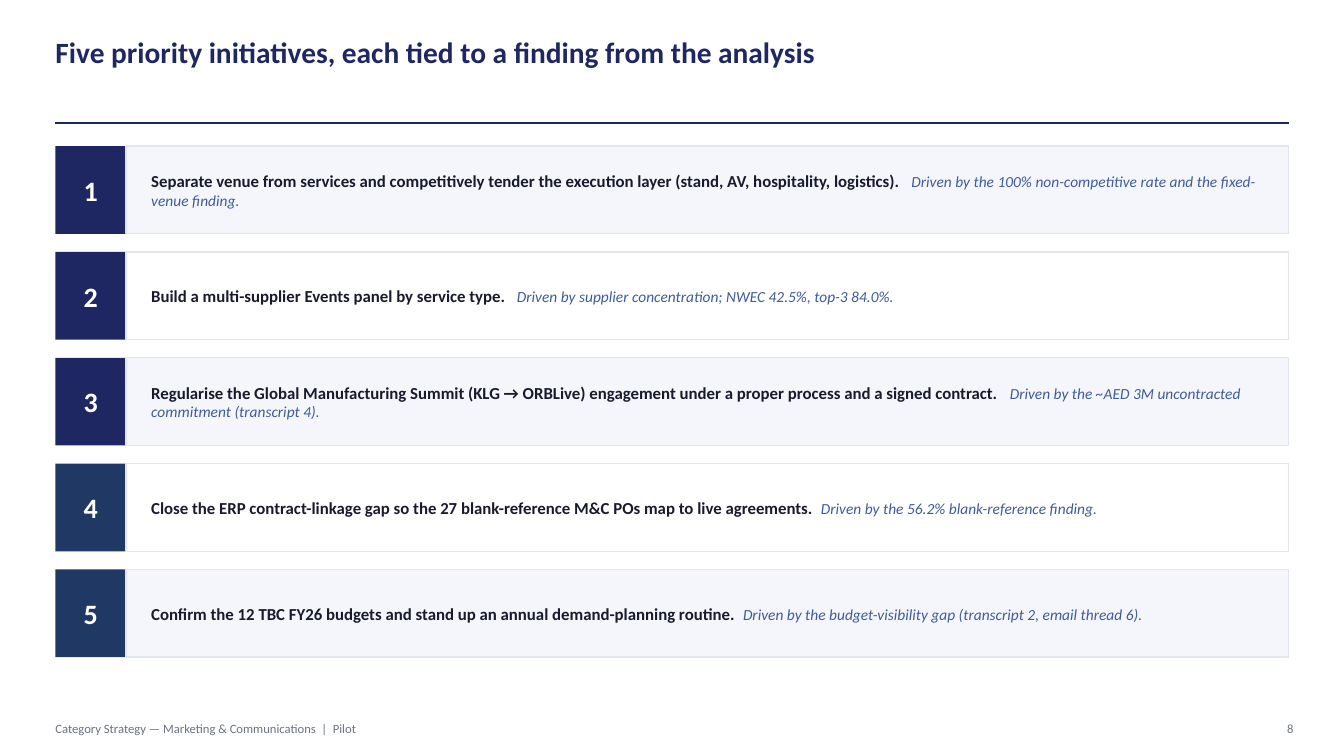
"""Build the slide of five priority initiatives."""
from pptx import Presentation
from pptx import util as u
from pptx.dml.color import RGBColor
from pptx.enum import shapes, text
from pptx.oxml import ns
from lxml import etree

TITLE = "Five priority initiatives, each tied to a finding from the analysis"
WIDE, SLIM = 5.2, 2.6
ITEMS = [
    ("Separate venue from services and competitively tender the execution layer "
     "(stand, AV, hospitality, logistics).", WIDE,
     "Driven by the 100% non-competitive rate and the fixed-venue finding.", "navy"),
    ("Build a multi-supplier Events panel by service type.", WIDE,
     "Driven by supplier concentration; NWEC 42.5%, top-3 84.0%.", "navy"),
    ("Regularise the Global Manufacturing Summit (KLG → ORBLive) engagement "
     "under a proper process and a signed contract.", WIDE,
     "Driven by the ~AED 3M uncontracted commitment (transcript 4).", "navy"),
    ("Close the ERP contract-linkage gap so the 27 blank-reference M&C POs map "
     "to live agreements.", SLIM,
     "Driven by the 56.2% blank-reference finding.", "slate"),
    ("Confirm the 12 TBC FY26 budgets and stand up an annual demand-planning "
     "routine.", SLIM,
     "Driven by the budget-visibility gap (transcript 2, email thread 6).", "slate"),
]
FOOT = ["Category Strategy — Marketing & Communications", "|", "Pilot"]
PAGE = "8"
HEX = {"navy": "1E2761", "slate": "203864", "white": "FFFFFF", "tint": "F4F6FB",
       "edge": "E0E5F0", "ink": "1A1A2E", "blue": "3E5C9A", "gray": "6B7280"}
PX = 9144
LEFT, WIDTH = 55, 1223
TOP, STEP, HIGH = 145, 105, 87
BADGE, PAD = 70, 25


def px(*nums):
    return [u.Emu(n * PX) for n in nums]


def rgb(name):
    return RGBColor.from_string(HEX[name])


def style(run, size, color, bold=False, italic=False):
    font = run.font
    font.name, font.size, font.color.rgb = "Calibri", u.Pt(size), rgb(color)
    font.bold, font.italic = bold, italic


def add(par, words, *look, gap=0):
    run = par.add_run()
    run.text = words
    style(run, *look)
    if gap:
        run.font._element.set("spc", str(round(gap * 100)))


def frame(shape, side=0, align=text.PP_ALIGN.LEFT, anchor=text.MSO_ANCHOR.MIDDLE):
    tf = shape.text_frame
    tf.word_wrap, tf.auto_size = True, text.MSO_AUTO_SIZE.NONE
    tf.margin_left = tf.margin_right = u.Emu(side * PX)
    tf.margin_top = tf.margin_bottom = 0
    tf.vertical_anchor = anchor
    par = tf.paragraphs[0]
    par.alignment = align
    return par


def label(par, words, *look):
    par.text = words
    style(par.runs[0], *look)


def block(slide, box, fill, edge=None):
    rect = slide.shapes.add_shape(shapes.MSO_SHAPE.RECTANGLE, *px(*box))
    rect.shadow.inherit = False
    rect.fill.solid()
    rect.fill.fore_color.rgb = rgb(fill)
    if edge:
        rect.line.color.rgb, rect.line.width = rgb(edge), u.Pt(1)
    else:
        rect.line.fill.background()
    return rect


def heading(slide):
    head = slide.shapes.title
    head.left, head.top, head.width, head.height = px(LEFT, 34, WIDTH, 82)
    label(frame(head, anchor=text.MSO_ANCHOR.TOP), TITLE, 21, "navy", True)
    rule = slide.shapes.add_connector(
        shapes.MSO_CONNECTOR.STRAIGHT, *px(LEFT, 122, LEFT + WIDTH, 122))
    rule.line.color.rgb, rule.line.width = rgb("navy"), u.Pt(1.25)
    etree.SubElement(rule._element.spPr, ns.qn("a:effectLst"))


def rows(slide):
    for i, (goal, gap, cause, color) in enumerate(ITEMS):
        y = TOP + i * STEP
        badge = block(slide, (LEFT, y, BADGE, HIGH), color)
        label(frame(badge, align=text.PP_ALIGN.CENTER), str(i + 1), 20, "white", True)
        card = block(slide, (LEFT + BADGE, y, WIDTH - BADGE, HIGH),
                     "white" if i % 2 else "tint", "edge")
        par = frame(card, PAD)
        add(par, goal, 12, "ink", True)
        add(par, " ", 12, "ink", True, gap=gap)
        add(par, cause, 11, "blue", False, True)


def footer(slide):
    par = frame(slide.shapes.add_textbox(*px(LEFT, 708, 900, 30)))
    for i, part in enumerate(FOOT):
        if i:
            add(par, " ", 9, "gray", gap=2)
        add(par, part, 9, "gray")
    box = slide.shapes.add_textbox(*px(1233, 708, 50, 30))
    label(frame(box, align=text.PP_ALIGN.RIGHT), PAGE, 9, "gray")


def main():
    deck = Presentation()
    deck.slide_width, deck.slide_height = px(1333, 750)
    slide = deck.slides.add_slide(deck.slide_layouts[5])
    heading(slide)
    rows(slide)
    footer(slide)
    deck.save("out.pptx")


if __name__ == "__main__":
    main()
